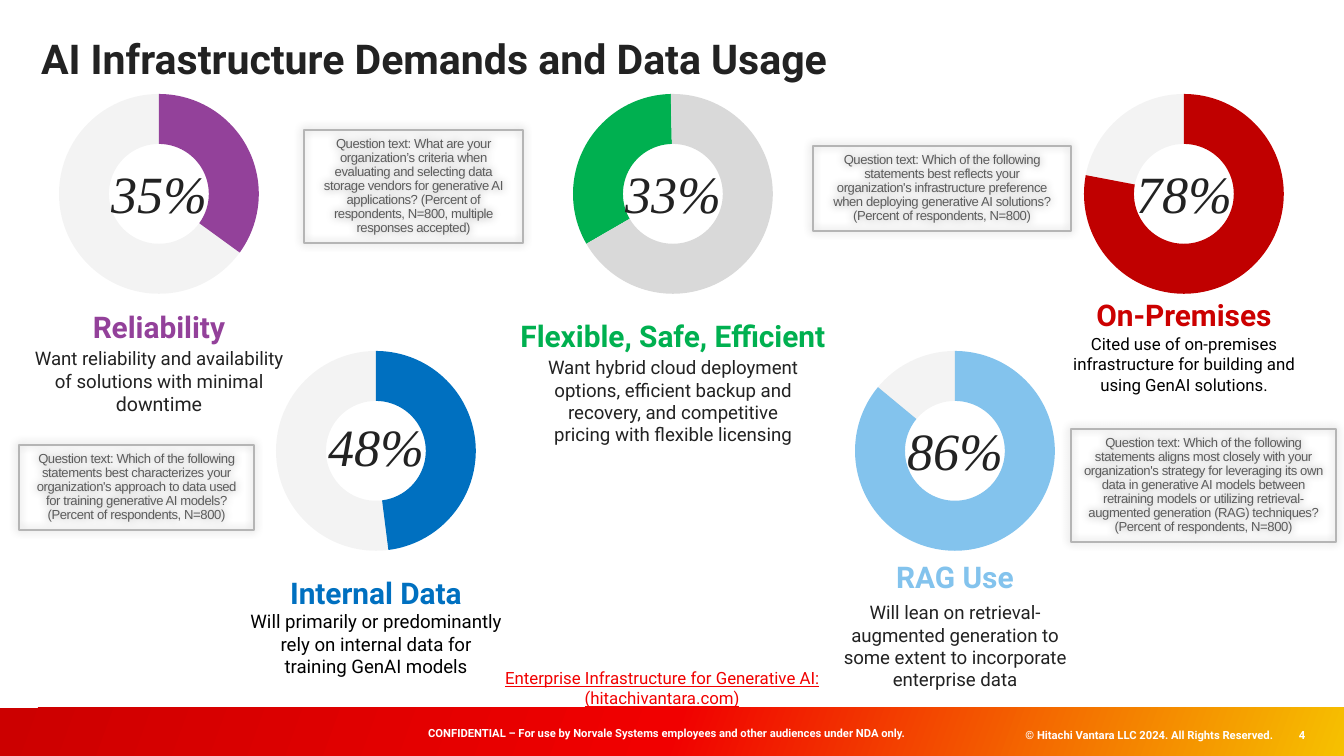
"""Build the slide on AI infrastructure demands and data usage."""
from lxml import etree
from pptx import Presentation
from pptx.chart.data import CategoryChartData
from pptx.dml.color import RGBColor
from pptx.enum.chart import XL_CHART_TYPE
from pptx.enum.shapes import MSO_SHAPE
from pptx.enum.text import MSO_ANCHOR, MSO_AUTO_SIZE, PP_ALIGN
from pptx.oxml import parse_xml
from pptx.oxml.ns import nsdecls, qn
from pptx.util import Pt

DOUGHNUT = XL_CHART_TYPE.DOUGHNUT
RECTANGLE = MSO_SHAPE.RECTANGLE
TOP, MIDDLE, BOTTOM = MSO_ANCHOR.TOP, MSO_ANCHOR.MIDDLE, MSO_ANCHOR.BOTTOM
GROW, FIXED = MSO_AUTO_SIZE.SHAPE_TO_FIT_TEXT, MSO_AUTO_SIZE.NONE
LEFT, CENTER, RIGHT = PP_ALIGN.LEFT, PP_ALIGN.CENTER, PP_ALIGN.RIGHT

SCALE = 9144000 / 1344
SLIDE_W, SLIDE_H = 1344, 756
CHART_W, CHART_H, RING = 300, 238, 200
INSETS = (13, 7, 13, 7)
NO_INSETS = (0, 0, 0, 0)
COLORS = {
    "ink": "222222", "black": "000000", "white": "FFFFFF", "gray": "D9D9D9",
    "note": "5C5C5C", "border": "B5B5B5", "link": "F10000", "gold": "F6C100",
    "red": "CC0000", "dark red": "C00000", "blue": "0070C0",
    "sky": "83C3ED", "purple": "93419A", "green": "00B050",
}

TITLE = "AI Infrastructure Demands and Data Usage"
METRICS = [
    {"value": 78, "center": 1184, "top": 75, "ring": "dark red", "color": "red",
     "heading": "On-Premises", "heading_top": 289, "body_top": 327, "body_color": "black",
     "body": [("Cited use of on-premises infrastructure for building and "
               "using GenAI solutions.", 9)]},
    {"value": 48, "center": 376, "top": 332, "number_top": 93, "color": "blue",
     "heading": "Internal Data", "heading_top": 567, "body_top": 603, "body_color": "black",
     "body": [("Will primarily or predominantly rely on internal data for "
               "training GenAI models", 10)]},
    {"value": 86, "center": 955, "top": 332, "color": "sky",
     "heading": "RAG Use", "heading_top": 551, "body_top": 594,
     "body": [("Will lean on retrieval-augmented generation to some extent to "
               "incorporate enterprise data", 10)]},
    {"value": 35, "center": 159, "top": 75, "color": "purple",
     "heading": "Reliability", "heading_top": 301, "body_top": 340,
     "body": [("Want reliability and availability of solutions with minimal ", 10),
              ("downtime", 10.5)]},
    {"value": 33, "center": 673, "top": 75, "color": "green", "rest": "gray", "start": 240,
     "heading": "Flexible, Safe, Efficient", "heading_top": 310, "heading_width": 411,
     "body_top": 349, "body_height": 126,
     "body": [("Want hybrid cloud deployment options, efficient backup and recovery, "
               "and competitive pricing with flexible licensing", 10)]},
]
QUESTIONS = [
    ((304, 130, 219, 113),
     "Question text: What are your organization’s criteria when evaluating and selecting "
     "data storage vendors for generative AI applications? (Percent of respondents, N=800, "
     "multiple responses accepted)"),
    ((1071, 429, 265, 113),
     "Question text: Which of the following statements aligns most closely with your "
     "organization's strategy for leveraging its own data in generative AI models between "
     "retraining models or utilizing retrieval-augmented generation (RAG) techniques? "
     "(Percent of respondents, N=800)"),
    ((19, 445, 235, 85),
     "Question text: Which of the following statements best characterizes your "
     "organization's approach to data used for training generative AI models? "
     "(Percent of respondents, N=800)"),
    ((813, 146, 258, 85),
     "Question text: Which of the following statements best reflects your organization's "
     "infrastructure preference when deploying generative AI solutions? "
     "(Percent of respondents, N=800)"),
]
LINK = "Enterprise Infrastructure for Generative AI: (hitachivantara.com)"
FOOTERS = [
    ((1286, 722, 42, 27), "4", LEFT, False, INSETS),
    ((988, 722, 298, 27), "© Hitachi Vantara LLC 2024. All Rights Reserved.", RIGHT, False, INSETS),
    ((402, 720, 542, 27), "CONFIDENTIAL – For use by Norvale Systems employees and other "
     "audiences under NDA only.", CENTER, True, (0, 7, 13, 7)),
]
BAND_STOPS = [(0, "red"), (50, "link"), (100, "gold")]


def px(*lengths):
    return [round(length * SCALE) for length in lengths]


def rgb(name):
    return RGBColor.from_string(COLORS[name])


def write(box, spans, color, font="Roboto", bold=False, italic=False, align=CENTER,
          anchor=TOP, insets=INSETS, wrap=True, size_mode=GROW, spacing=None):
    frame = box.text_frame
    frame.word_wrap, frame.auto_size, frame.vertical_anchor = wrap, size_mode, anchor
    (frame.margin_left, frame.margin_top,
     frame.margin_right, frame.margin_bottom) = px(*insets)
    para = frame.paragraphs[0]
    para.alignment, para.line_spacing = align, spacing
    for text, size in spans:
        span = para.add_run()
        span.text = text
        span.font.name, span.font.size = font, Pt(size)
        span.font.bold, span.font.italic = bold, italic
        span.font.color.rgb = rgb(color)
    return para


def add_text(page, place, spans, color, **style):
    return write(page.shapes.add_textbox(*px(*place)), spans, color, **style)


def add_band(page):
    band = page.shapes.add_shape(RECTANGLE, *px(0, 708, SLIDE_W, 48))
    band.shadow.inherit = False
    band.line.fill.background()
    stops = "".join(f'<a:gs pos="{pos * 1000}"><a:srgbClr val="{COLORS[name]}"/></a:gs>'
                    for pos, name in BAND_STOPS)
    props = band._element.spPr
    props.find(qn("a:prstGeom")).addnext(parse_xml(
        f'<a:gradFill {nsdecls("a")}><a:gsLst>{stops}</a:gsLst>'
        '<a:lin ang="1200000" scaled="0"/></a:gradFill>'))


def add_ring(page, metric):
    data = CategoryChartData()
    data.categories = ["1", "2"]
    data.add_series("Series 1", [metric["value"], 100 - metric["value"]])
    place = px(metric["center"] - CHART_W / 2, metric["top"], CHART_W, CHART_H)
    chart = page.shapes.add_chart(DOUGHNUT, *place, data).chart
    chart.has_legend = chart.has_title = False
    chart.font.name, chart.font.size = "Arial", Pt(10)
    chart.font.color.rgb = rgb("ink")
    plot = chart.plots[0]
    plot.vary_by_categories = True
    fills = [metric.get("ring", metric["color"]), metric.get("rest", "ink")]
    for index, name in enumerate(fills):
        look = plot.series[0].points[index].format
        look.fill.solid()
        look.fill.fore_color.rgb = rgb(name)
        look.line.fill.background()
    if "rest" not in metric:
        for tint in plot._element.iter(qn("a:srgbClr")):
            if tint.get("val") == COLORS["ink"]:
                etree.SubElement(tint, qn("a:alpha")).set("val", "5000")
    plot._element.find(qn("c:firstSliceAng")).set("val", str(metric.get("start", 0)))
    plot._element.find(qn("c:holeSize")).set("val", "80")
    area = plot._element.getparent()
    for old in area.findall(qn("c:layout")):
        area.remove(old)
    w, h = round(RING / CHART_W, 2), round(RING / CHART_H, 2)
    area.insert(0, parse_xml(
        f'<c:layout {nsdecls("c")}><c:manualLayout><c:layoutTarget val="inner"/>'
        '<c:xMode val="edge"/><c:yMode val="edge"/>'
        f'<c:x val="{(1 - w) / 2:.3f}"/><c:y val="{(1 - h) / 2:.3f}"/>'
        f'<c:w val="{w}"/><c:h val="{h}"/></c:manualLayout></c:layout>'))


def add_metric(page, metric):
    def centered(top, width, height):
        return metric["center"] - width / 2, top, width, height

    add_ring(page, metric)
    add_text(page, centered(metric["top"] + metric.get("number_top", 97), 129, 50),
             [(f"{metric['value']}%", 28)], "ink", font="Times New Roman", italic=True,
             anchor=MIDDLE, insets=NO_INSETS, wrap=False, size_mode=FIXED, spacing=0.9)
    add_text(page, centered(metric["body_top"], 282, metric.get("body_height", 82)),
             metric["body"], metric.get("body_color", "ink"))
    add_text(page, centered(metric["heading_top"], metric.get("heading_width", 274), 50),
             [(metric["heading"], 16)], metric["color"], bold=True, anchor=BOTTOM)


def add_question(page, place, text):
    box = page.shapes.add_shape(RECTANGLE, *px(*place))
    box.fill.background()
    box.line.color.rgb, box.line.width = rgb("border"), Pt(0.75)
    box.shadow.inherit = False
    box._element.spPr.find(qn("a:effectLst")).append(parse_xml(
        f'<a:outerShdw {nsdecls("a")} blurRad="{Pt(5)}" dist="0" dir="0">'
        '<a:srgbClr val="000000"><a:alpha val="40000"/></a:srgbClr></a:outerShdw>'))
    para = write(box, [(text, 7)], "note", font="Arial", spacing=0.9)
    para.space_after = Pt(6)
    para.runs[0].font._element.set("spc", "-20")


def main():
    deck = Presentation()
    deck.slide_width, deck.slide_height = px(SLIDE_W, SLIDE_H)
    page = deck.slides.add_slide(deck.slide_layouts[5])
    add_band(page)
    for place, text, align, wrap, insets in FOOTERS:
        add_text(page, place, [(text, 6)], "white", bold=True, align=align,
                 wrap=wrap, insets=insets)
    title = page.shapes.title
    title.left, title.top, title.width, title.height = px(30, 8, 1036, 108)
    write(title, [(TITLE, 22)], "ink", bold=True, align=LEFT, anchor=MIDDLE,
          insets=(11, 0, 13, 0), size_mode=FIXED, spacing=0.85)
    for metric in METRICS:
        add_metric(page, metric)
    for place, text in QUESTIONS:
        add_question(page, place, text)
    link = add_text(page, (469, 661, 364, 46), [(LINK, 9)], "link", size_mode=FIXED)
    link.space_after = Pt(2)
    link.runs[0].font.underline = True
    link._p.get_or_add_pPr().set("marL", str(px(22)[0]))
    deck.save("out.pptx")


if __name__ == "__main__":
    main()
